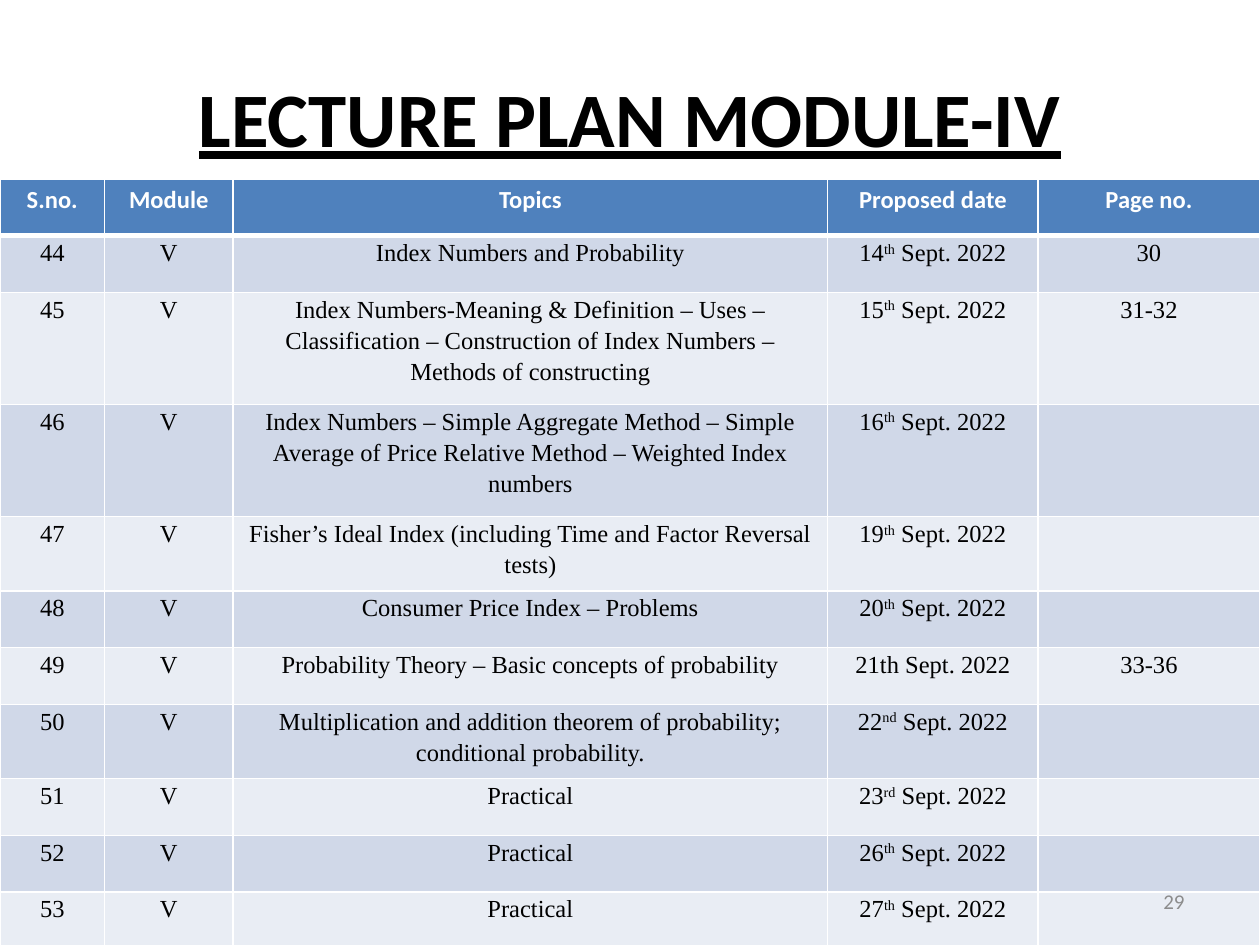
from lxml.etree import SubElement
from pptx import Presentation
from pptx.dml.color import RGBColor
from pptx.enum.text import MSO_ANCHOR, PP_ALIGN
from pptx.oxml.ns import qn
from pptx.util import Inches, Pt

TITLE = "LECTURE PLAN MODULE-IV"
PAGE_NUMBER = "29"
HEADERS = ["S.no.", "Module", "Topics", "Proposed date", "Page no."]
FIRST_NUMBER = 44
MODULE = "V"
MONTH = " Sept. 2022"
LECTURES = [
    ("Index Numbers and Probability", "14", "th", "30", 0.45),
    ("Index Numbers-Meaning & Definition – Uses – Classification – "
     "Construction of Index Numbers – Methods of constructing", "15", "th", "31-32", 0.89),
    ("Index Numbers – Simple Aggregate Method – Simple Average of Price "
     "Relative Method – Weighted Index numbers", "16", "th", "", 0.89),
    ("Fisher’s Ideal Index (including Time and Factor Reversal tests)", "19", "th", "", 0.59),
    ("Consumer Price Index – Problems", "20", "th", "", 0.45),
    ("Probability Theory – Basic concepts of probability", "21th", "", "33-36", 0.45),
    ("Multiplication and addition theorem of probability; conditional probability.",
     "22", "nd", "", 0.59),
    ("Practical", "23", "rd", "", 0.45),
    ("Practical", "26", "th", "", 0.45),
    ("Practical", "27", "th", "", 0.45),
]
COLUMN_WIDTHS = [0.83, 1.02, 4.72, 1.67, 1.76]
HEADER_HEIGHT = 0.45
TOPIC_COLUMN = 2
SPACED_ROWS = (1, 2)
HEADER_FILL = "4F81BD"
BAND_FILLS = ["D0D8E8", "E9EDF4"]
WHITE, BLACK, GREY = "FFFFFF", "000000", "8C8C8C"


def color(value):
    """Turn a hex string into a colour."""
    return RGBColor.from_string(value)


def add_run(paragraph, text, size, font, hex_color, bold=False):
    """Append a formatted run."""
    run = paragraph.add_run()
    run.text = text
    run.font.size = Pt(size)
    run.font.name = font
    run.font.bold = bold
    run.font.color.rgb = color(hex_color)
    return run


def style_cell(cell, fill, top=1, bottom=1):
    """Draw white borders around a cell and fill it."""
    properties = cell._tc.get_or_add_tcPr()
    for side, width in (("L", 1), ("R", 1), ("T", top), ("B", bottom)):
        line = SubElement(properties, qn(f"a:ln{side}"), w=str(Pt(width)))
        SubElement(SubElement(line, qn("a:solidFill")), qn("a:srgbClr"), val=WHITE)
    cell.fill.solid()
    cell.fill.fore_color.rgb = color(fill)


def add_title(slide):
    """Place and format the slide title."""
    title = slide.shapes.title
    title.left, title.top, title.width, title.height = map(Inches, (0.5, 0.3, 9, 1.25))
    title.text_frame.vertical_anchor = MSO_ANCHOR.MIDDLE
    paragraph = title.text_frame.paragraphs[0]
    paragraph.alignment = PP_ALIGN.CENTER
    add_run(paragraph, TITLE, 44, "Calibri", BLACK, bold=True).font.underline = True


def fill_header(table):
    """Write the header row."""
    for cell, text in zip(table.rows[0].cells, HEADERS):
        style_cell(cell, HEADER_FILL, bottom=3)
        paragraph = cell.text_frame.paragraphs[0]
        paragraph.alignment = PP_ALIGN.CENTER
        add_run(paragraph, text, 14, "Calibri", WHITE, bold=True)


def fill_lecture(table, row, lecture):
    """Write one lecture row."""
    topic, day, suffix, pages, _ = lecture
    date = [day, suffix, MONTH] if suffix else [day + MONTH]
    contents = [[str(FIRST_NUMBER + row - 1)], [MODULE], [topic], date, [pages]]
    for column, parts in enumerate(contents):
        cell = table.cell(row, column)
        style_cell(cell, BAND_FILLS[(row - 1) % 2], top=3 if row == 1 else 1)
        if not parts[0]:
            continue
        cell.margin_left = cell.margin_right = Inches(0.07)
        cell.margin_top = cell.margin_bottom = 0
        paragraph = cell.text_frame.paragraphs[0]
        paragraph.alignment = PP_ALIGN.CENTER
        paragraph.line_spacing = 1.15
        if column == TOPIC_COLUMN and row in SPACED_ROWS:
            paragraph.space_before = paragraph.space_after = Pt(2.4)
        for index, text in enumerate(parts):
            run = add_run(paragraph, text, 14, "Times New Roman", BLACK)
            if index == 1:
                run._r.get_or_add_rPr().set("baseline", "30000")


def add_plan(slide):
    """Build the lecture table."""
    heights = [HEADER_HEIGHT] + [lecture[-1] for lecture in LECTURES]
    table = slide.shapes.add_table(
        len(heights), len(HEADERS), 0, Inches(1.42),
        Inches(sum(COLUMN_WIDTHS)), Inches(sum(heights))).table
    for column, width in zip(table.columns, COLUMN_WIDTHS):
        column.width = Inches(width)
    for row, height in zip(table.rows, heights):
        row.height = Inches(height)
    fill_header(table)
    for row, lecture in enumerate(LECTURES, start=1):
        fill_lecture(table, row, lecture)


def add_page_number(slide):
    """Place the page number at the lower right."""
    box = slide.shapes.add_textbox(*map(Inches, (7.17, 6.95, 2.33, 0.4)))
    box.text_frame.word_wrap = True
    box.text_frame.vertical_anchor = MSO_ANCHOR.MIDDLE
    paragraph = box.text_frame.paragraphs[0]
    paragraph.alignment = PP_ALIGN.RIGHT
    add_run(paragraph, PAGE_NUMBER, 12, "Calibri", GREY)


def main():
    """Build and save the slide."""
    presentation = Presentation()
    presentation.slide_width, presentation.slide_height = Inches(10), Inches(7.5)
    slide = presentation.slides.add_slide(presentation.slide_layouts[5])
    add_title(slide)
    add_plan(slide)
    add_page_number(slide)
    presentation.save("out.pptx")


if __name__ == "__main__":
    main()
